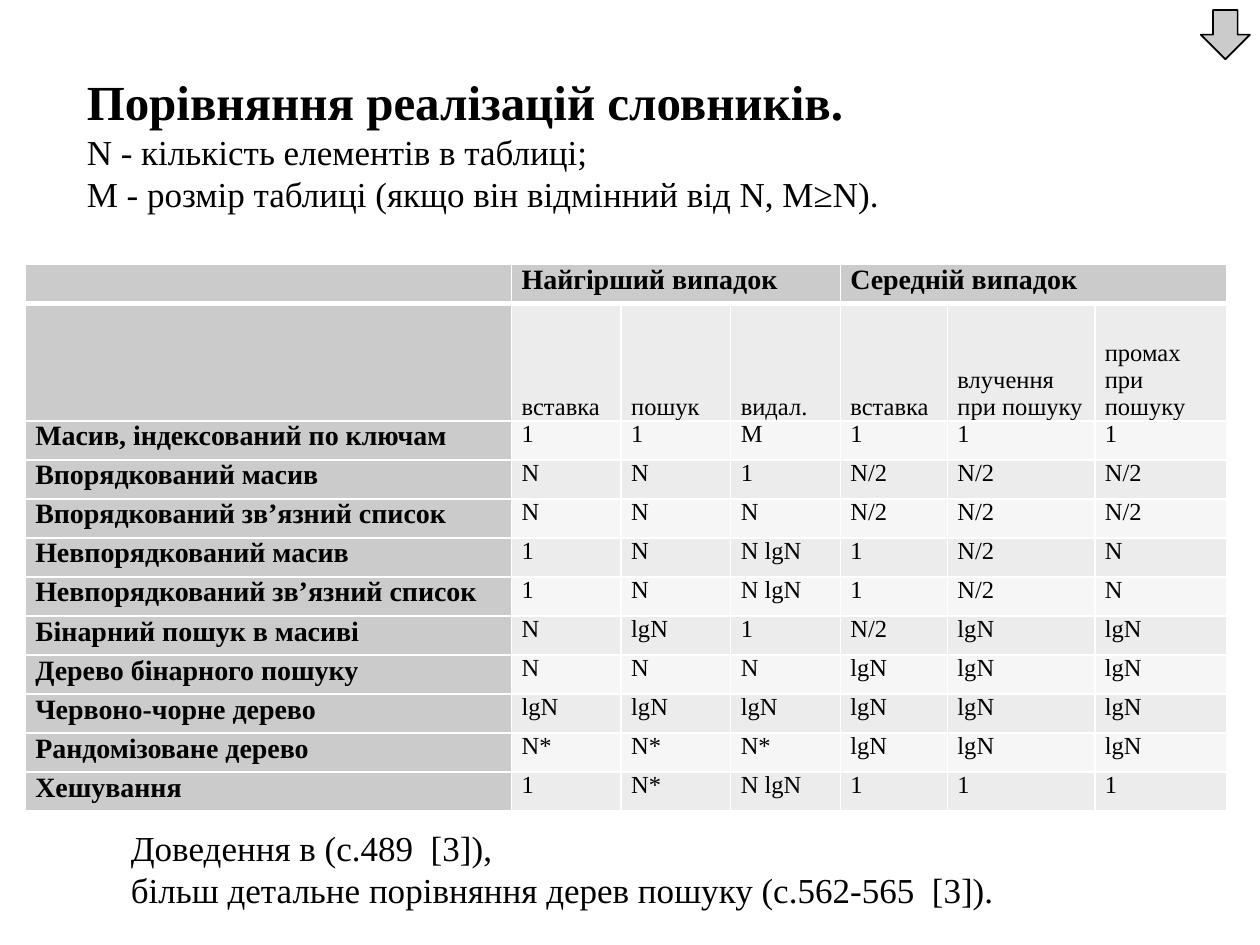
"""Build a slide comparing the cost of dictionary implementations."""
from dataclasses import dataclass

from lxml.etree import SubElement
from pptx import Presentation
from pptx.dml.color import RGBColor
from pptx.enum.shapes import MSO_SHAPE
from pptx.enum.text import MSO_ANCHOR, MSO_AUTO_SIZE, PP_ALIGN
from pptx.oxml.ns import qn
from pptx.util import Inches, Pt

FONT = "Times New Roman"
BLACK, WHITE = "000000", "FFFFFF"
GREY, LIGHT, PALE = "CBCBCB", "ECECEC", "F6F6F6"
COLUMN_WIDTHS = (3.86, 0.87, 0.87, 0.87, 0.85, 1.17, 1.05)
ROW_HEIGHT, OPERATION_HEIGHT = 0.31, 0.93
FIRST_AVERAGE = 4
GROUPS = {1: "Найгірший випадок", FIRST_AVERAGE: "Середній випадок"}
OPERATIONS = ("вставка", "пошук", "видал.", "вставка", "влучення при пошуку", "промах при пошуку")


@dataclass
class Line:
    text: str
    size: int = 20
    bold: bool = False


@dataclass
class TextBlock:
    left: float
    top: float
    width: float
    height: float
    lines: tuple[Line, ...]
    wrap: bool = True


@dataclass
class Implementation:
    name: str
    costs: tuple[str, ...]


IMPLEMENTATIONS = (
    Implementation("Масив, індексований по ключам", ("1", "1", "M", "1", "1", "1")),
    Implementation("Впорядкований масив", ("N", "N", "1", "N/2", "N/2", "N/2")),
    Implementation("Впорядкований зв’язний список", ("N", "N", "N", "N/2", "N/2", "N/2")),
    Implementation("Невпорядкований масив", ("1", "N", "N lgN", "1", "N/2", "N")),
    Implementation("Невпорядкований зв’язний список", ("1", "N", "N lgN", "1", "N/2", "N")),
    Implementation("Бінарний пошук в масиві", ("N", "lgN", "1", "N/2", "lgN", "lgN")),
    Implementation("Дерево бінарного пошуку", ("N", "N", "N", "lgN", "lgN", "lgN")),
    Implementation("Червоно-чорне дерево", ("lgN",) * 6),
    Implementation("Рандомізоване дерево", ("N*", "N*", "N*", "lgN", "lgN", "lgN")),
    Implementation("Хешування", ("1", "N*", "N lgN", "1", "1", "1")),
)
TEXT_BLOCKS = (
    TextBlock(0.59, 0.52, 9.21, 1.25, (
        Line("Порівняння реалізацій словників.", 28, True),
        Line("N - кількість елементів в таблиці;"),
        Line("М - розмір таблиці (якщо він відмінний від N, M≥N)."),
    )),
    TextBlock(0.94, 6.51, 7.27, 0.77, (
        Line("Доведення в (с.489  [3]),"),
        Line("більш детальне порівняння дерев пошуку (с.562-565  [3])."),
    ), wrap=False),
)


def color(value: str) -> RGBColor:
    return RGBColor.from_string(value)


def write_line(para, line: Line) -> None:
    para.text = line.text
    for span in para.runs:
        span.font.name = FONT
        span.font.size = Pt(line.size)
        span.font.bold = line.bold
        span.font.color.rgb = color(BLACK)


def add_text(page, block: TextBlock) -> None:
    box = page.shapes.add_textbox(
        Inches(block.left), Inches(block.top), Inches(block.width), Inches(block.height))
    frame = box.text_frame
    frame.word_wrap = block.wrap
    frame.auto_size = MSO_AUTO_SIZE.SHAPE_TO_FIT_TEXT
    frame.text = "\n".join(line.text for line in block.lines)
    for para, line in zip(frame.paragraphs, block.lines):
        write_line(para, line)


def add_borders(cell, row: int) -> None:
    properties = cell._tc.get_or_add_tcPr()
    thick_side = {0: "lnB", 1: "lnT"}.get(row)
    for side in ("lnL", "lnR", "lnT", "lnB"):
        width = Pt(3 if side == thick_side else 1)
        border = SubElement(properties, qn(f"a:{side}"), w=str(width))
        fill = SubElement(border, qn("a:solidFill"))
        SubElement(fill, qn("a:srgbClr"), val=WHITE)


def style_cell(cell, text: str, row: int, column: int) -> None:
    heading = row == 0 or column == 0
    cell.margin_left = cell.margin_right = Inches(0.08)
    cell.margin_top = cell.margin_bottom = 0
    if row == 1:
        cell.vertical_anchor = MSO_ANCHOR.BOTTOM
    add_borders(cell, row)
    cell.fill.solid()
    cell.fill.fore_color.rgb = color(GREY if heading else LIGHT if row % 2 else PALE)
    para = cell.text_frame.paragraphs[0]
    write_line(para, Line(text, 16 if heading else 14, heading))
    if column >= FIRST_AVERAGE and text in ("N/2", "lgN"):
        para.alignment = PP_ALIGN.JUSTIFY


def add_comparison(page) -> None:
    contents = [
        [GROUPS.get(column, "") for column in range(len(COLUMN_WIDTHS))],
        ["", *OPERATIONS],
        *([item.name, *item.costs] for item in IMPLEMENTATIONS),
    ]
    heights = [OPERATION_HEIGHT if row == 1 else ROW_HEIGHT for row in range(len(contents))]
    table = page.shapes.add_table(
        len(contents), len(COLUMN_WIDTHS), Inches(0.2), Inches(2.1),
        Inches(sum(COLUMN_WIDTHS)), Inches(sum(heights))).table
    for column, width in zip(table.columns, COLUMN_WIDTHS):
        column.width = Inches(width)
    for row, height in zip(table.rows, heights):
        row.height = Inches(height)
    for row, texts in enumerate(contents):
        for column, text in enumerate(texts):
            style_cell(table.cell(row, column), text, row, column)
    for column in GROUPS:
        table.cell(0, column).merge(table.cell(0, column + 2))


def add_down_arrow(page) -> None:
    arrow = page.shapes.add_shape(
        MSO_SHAPE.DOWN_ARROW, Inches(9.53), Inches(0.08), Inches(0.39), Inches(0.39))
    arrow.shadow.inherit = False
    arrow.fill.solid()
    arrow.fill.fore_color.rgb = color(GREY)
    arrow.line.color.rgb = color(BLACK)
    arrow.line.width = Pt(1)


def main() -> None:
    deck = Presentation()
    deck.slide_width, deck.slide_height = Inches(10), Inches(7.5)
    page = deck.slides.add_slide(deck.slide_layouts[6])
    add_comparison(page)
    for block in TEXT_BLOCKS:
        add_text(page, block)
    add_down_arrow(page)
    deck.save("out.pptx")


if __name__ == "__main__":
    main()
